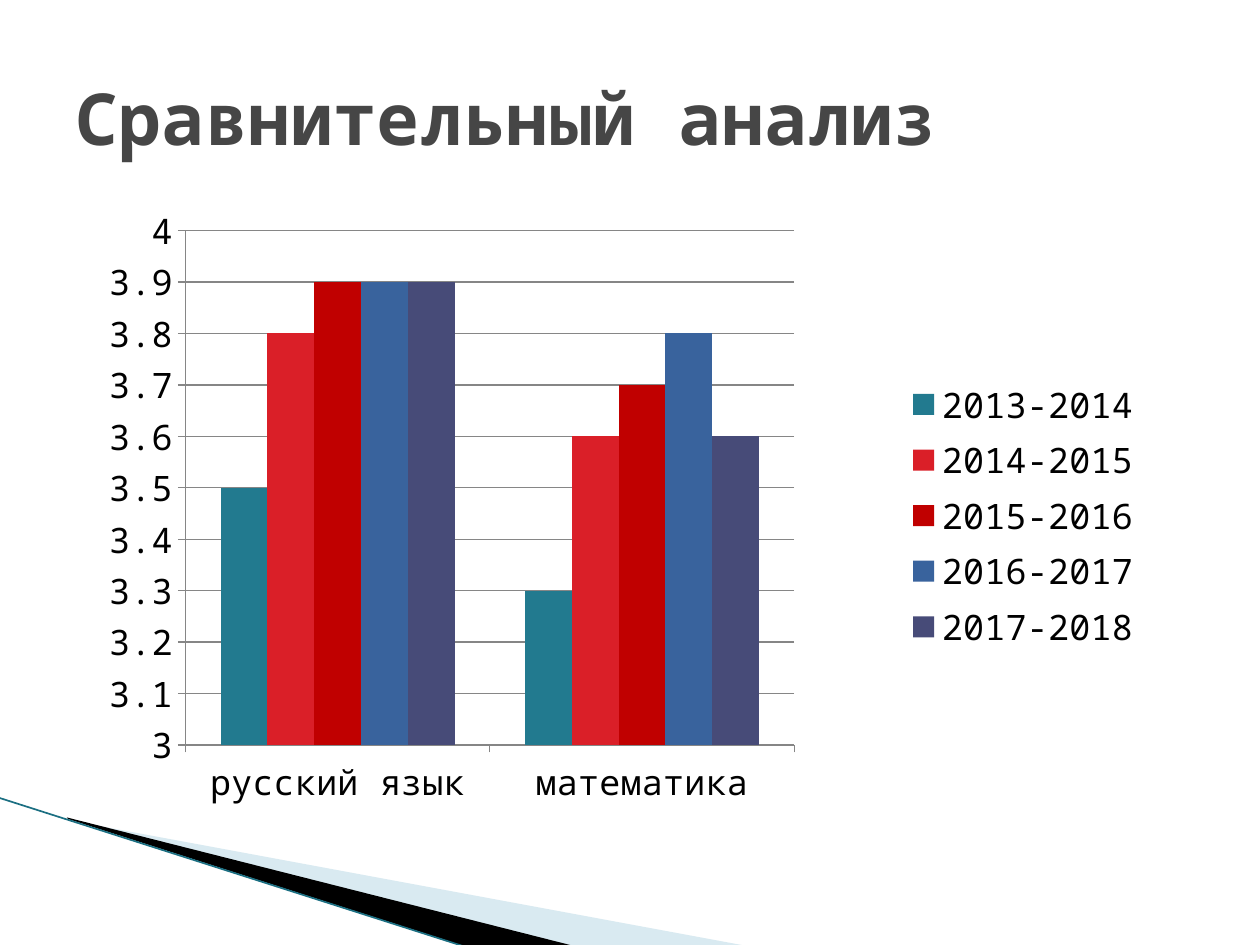
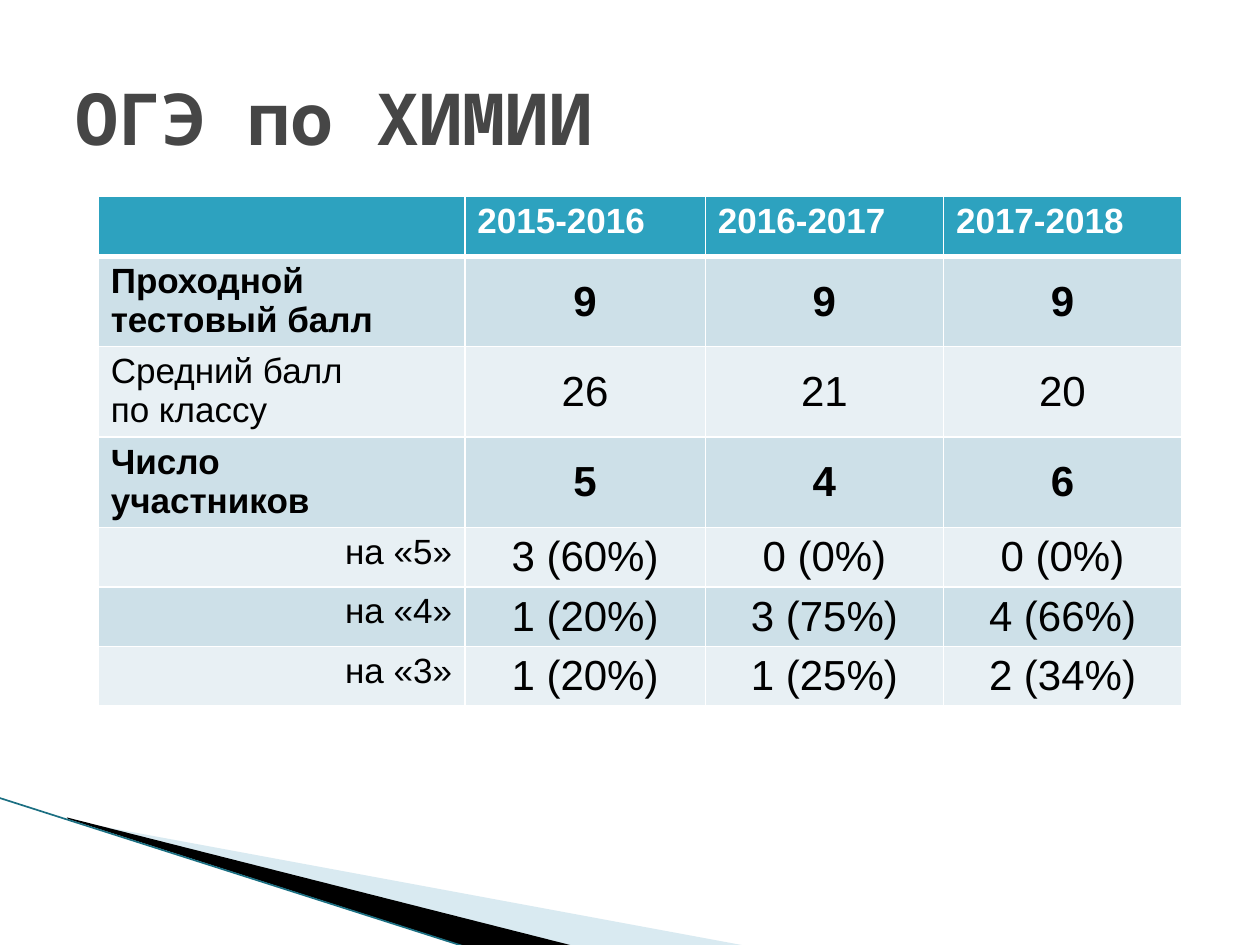
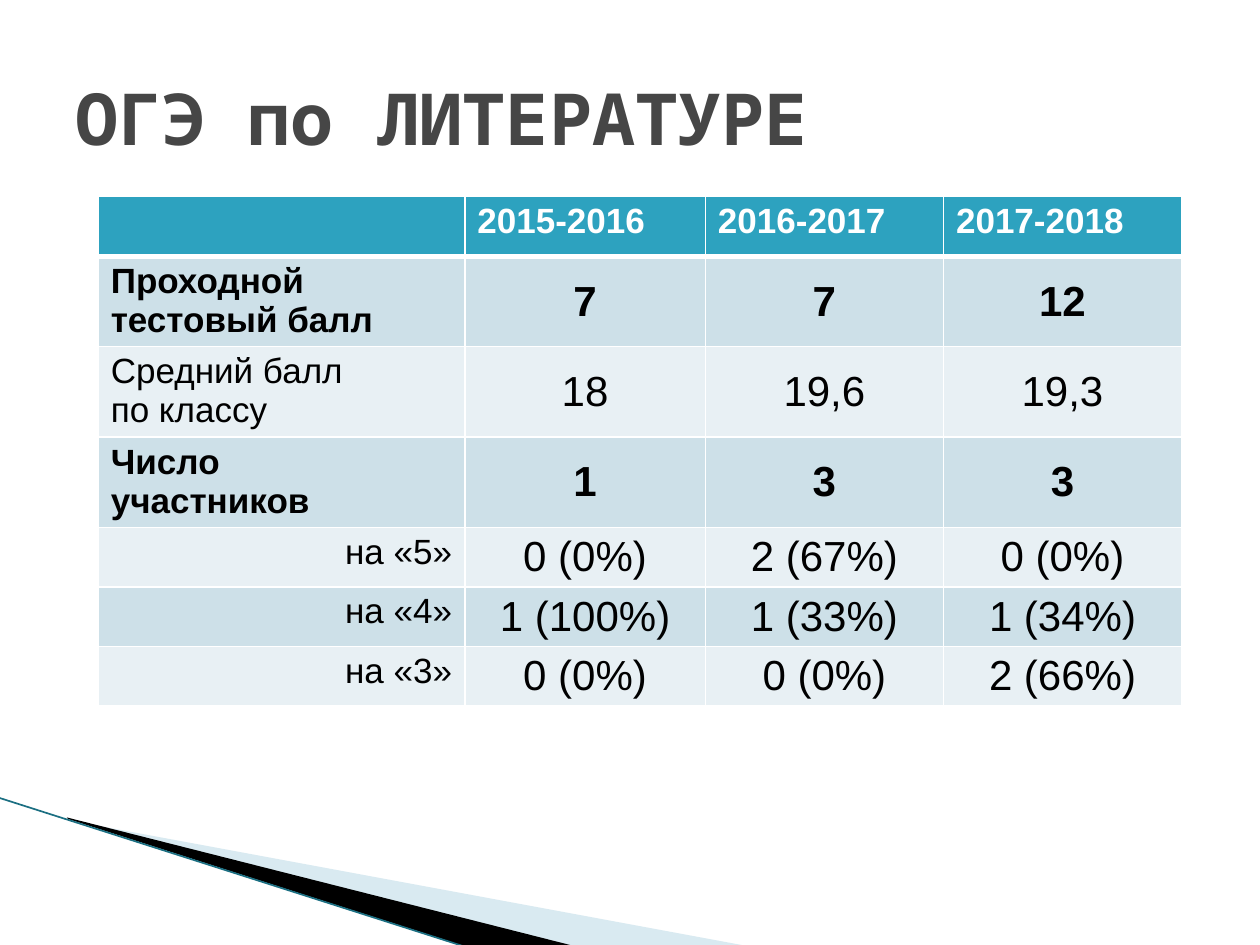
from dataclasses import dataclass

from lxml.etree import SubElement
from pptx import Presentation
from pptx.chart.data import CategoryChartData
from pptx.dml.color import RGBColor
from pptx.enum.chart import XL_CHART_TYPE as ChartType, XL_LEGEND_POSITION as LegendPosition
from pptx.enum.chart import XL_TICK_MARK as TickMark
from pptx.enum.shapes import MSO_CONNECTOR as Connector
from pptx.enum.text import MSO_ANCHOR as Anchor, PP_ALIGN as Align
from pptx.oxml import parse_xml
from pptx.oxml.ns import nsdecls, qn
from pptx.util import Cm, Pt


@dataclass(frozen=True)
class Theme:
    title_font: str = "Noto Sans Mono"
    table_font: str = "Arial"
    title_size: int = 41
    label_size: int = 20
    value_size: int = 24
    title: str = "464646"
    text: str = "000000"
    white: str = "FFFFFF"
    grid: str = "868686"
    wedge_light: str = "A0CBDC"
    wedge_dark: str = "000000"
    wedge_edge: str = "1B6F82"
    header: str = "2DA2BF"
    bands: tuple = ("CDE0E8", "E8F0F4")
    years: tuple = ("227A8F", "DA1F28", "C00000", "39639D", "474B78")


THEME = Theme()

# Boxes in cm: left, top, width, height
TITLE_BOX = (1.27, 0.76, 22.86, 3.18)
CHART_BOX = (2.13, 4.11, 21.16, 12.57)
WEDGE_ORIGIN = (0, 16.08)
TABLE_ORIGIN = (1.98, 3.96)

# Table grid in cm
COLUMN_WIDTHS = (7.39, 4.85, 4.8, 4.8)
ROW_HEIGHTS = (1.21, 1.82, 1.82, 1.82, 1.2, 1.2, 1.2)

# Comparison of average marks by school year
SUBJECTS = ("русский язык", "математика")
MARKS = {
    "2013-2014": (3.5, 3.3),
    "2014-2015": (3.8, 3.6),
    "2015-2016": (3.9, 3.7),
    "2016-2017": (3.9, 3.8),
    "2017-2018": (3.9, 3.6),
}

# Exam results: row labels are shared, values belong to a subject
EXAM_YEARS = ("2015-2016", "2016-2017", "2017-2018")
# lines, alignment, bold
EXAM_ROWS = (
    (("Проходной", "тестовый балл"), Align.LEFT, True),
    (("Средний балл", "по классу"), Align.LEFT, False),
    (("Число", "участников"), Align.LEFT, True),
    (("на «5»",), Align.RIGHT, False),
    (("на «4»",), Align.RIGHT, False),
    (("на «3»",), Align.RIGHT, False),
)
EXAMS = {
    "ОГЭ по ХИМИИ": (
        ("9", "9", "9"),
        ("26", "21", "20"),
        ("5", "4", "6"),
        ("3 (60%)", "0 (0%)", "0 (0%)"),
        ("1 (20%)", "3 (75%)", "4 (66%)"),
        ("1 (20%)", "1 (25%)", "2 (34%)"),
    ),
    "ОГЭ по ЛИТЕРАТУРЕ": (
        ("7", "7", "12"),
        ("18", "19,6", "19,3"),
        ("1", "3", "3"),
        ("0 (0%)", "2 (67%)", "0 (0%)"),
        ("1 (100%)", "1 (33%)", "1 (34%)"),
        ("0 (0%)", "0 (0%)", "2 (66%)"),
    ),
}


def rgb(value):
    return RGBColor.from_string(value)


def style_font(font, name, size, color, bold=False):
    font.name, font.size, font.bold = name, Pt(size), bold
    font.color.rgb = rgb(color)


# Shared corner decoration, kept on the layout
def add_wedges(slide, layout, origin):
    left, top = origin

    def wedge(points, color, opacity=None):
        corners = [(Cm(left + x), Cm(top + y)) for x, y in points]
        builder = slide.shapes.build_freeform(*corners[0])
        builder.add_line_segments(corners[1:])
        outline = builder.convert_to_shape()
        outline.shadow.inherit = False
        outline.line.fill.background()
        outline.fill.solid()
        outline.fill.fore_color.rgb = rgb(color)
        if opacity:
            tint = outline.element.spPr.find(qn("a:solidFill"))[0]
            SubElement(tint, qn("a:alpha"), val=str(opacity * 1000))
        return outline

    light = wedge([(1.4, 0.46), (15.11, 3), (11.58, 3), (1.4, 0.43)], THEME.wedge_light, 40)
    dark = wedge([(1.35, 0.4), (11.61, 3), (9.45, 3.02), (1.37, 0.43)], THEME.wedge_dark)
    edge = slide.shapes.add_connector(
        Connector.STRAIGHT, Cm(left - 0.03), Cm(top), Cm(left + 9.42), Cm(top + 3.02))
    edge.line.color.rgb = rgb(THEME.wedge_edge)
    edge.line.width = Pt(0.95)
    SubElement(edge.element.spPr, qn("a:effectLst"))

    # Behind the placeholders: right after the two group property elements
    for position, part in enumerate((light, dark, edge), start=2):
        layout.shapes.element.insert(position, part.element)


def add_titled_slide(prs, layout, heading):
    slide = prs.slides.add_slide(layout)
    title = slide.shapes.title
    title.left, title.top, title.width, title.height = map(Cm, TITLE_BOX)
    title.text_frame.vertical_anchor = Anchor.MIDDLE
    paragraph = title.text_frame.paragraphs[0]
    paragraph.alignment = Align.LEFT
    run = paragraph.add_run()
    run.text = heading
    style_font(run.font, THEME.title_font, THEME.title_size, THEME.title, True)
    return slide


def place_plot(chart, x, y, width, height):
    plot_area = chart.element.chart.plotArea
    for old in plot_area.findall(qn("c:layout")):
        plot_area.remove(old)
    plot_area.insert(0, parse_xml(
        f'<c:layout {nsdecls("c")}><c:manualLayout><c:layoutTarget val="inner"/>'
        '<c:xMode val="edge"/><c:yMode val="edge"/>'
        f'<c:x val="{x}"/><c:y val="{y}"/><c:w val="{width}"/><c:h val="{height}"/>'
        '</c:manualLayout></c:layout>'))


def add_marks_chart(slide, box):
    marks = CategoryChartData()
    marks.categories = SUBJECTS
    for year, values in MARKS.items():
        marks.add_series(year, values)
    chart = slide.shapes.add_chart(ChartType.COLUMN_CLUSTERED, *map(Cm, box), marks).chart
    style_font(chart.font, THEME.title_font, THEME.label_size, THEME.text)
    chart.has_title = False
    place_plot(chart, 0.076, 0.043, 0.58, 0.825)

    # Columns
    plot = chart.plots[0]
    plot.vary_by_categories = False
    plot.gap_width, plot.overlap = 150, 0
    for year, color in zip(plot.series, THEME.years):
        year.format.fill.solid()
        year.format.fill.fore_color.rgb = rgb(color)

    # Axes
    scale = chart.value_axis
    scale.minimum_scale, scale.maximum_scale, scale.major_unit = 3, 4, 0.1
    scale.has_major_gridlines = True
    for axis in (scale, chart.category_axis):
        axis.major_tick_mark = TickMark.OUTSIDE
        axis.minor_tick_mark = TickMark.NONE
    for line in (scale.format.line, scale.major_gridlines.format.line,
                 chart.category_axis.format.line):
        line.color.rgb = rgb(THEME.grid)
        line.width = Pt(0.75)

    # Legend
    chart.has_legend = True
    chart.legend.position = LegendPosition.RIGHT
    chart.legend.include_in_layout = False


def set_borders(cell, top=1, bottom=1):
    widths = {"lnL": 1, "lnR": 1, "lnT": top, "lnB": bottom}
    for side, width in widths.items():
        border = SubElement(cell._tc.get_or_add_tcPr(), qn(f"a:{side}"), w=str(Pt(width)))
        fill = SubElement(border, qn("a:solidFill"))
        SubElement(fill, qn("a:srgbClr"), val=THEME.white)


def fill_cell(cell, lines, fill, size, color, bold, align=Align.LEFT, anchor=Anchor.TOP):
    cell.fill.solid()
    cell.fill.fore_color.rgb = rgb(fill)
    cell.margin_top = cell.margin_bottom = Cm(0.11)
    cell.vertical_anchor = anchor
    for number, line in enumerate(lines):
        frame = cell.text_frame
        paragraph = frame.add_paragraph() if number else frame.paragraphs[0]
        paragraph.alignment = align
        run = paragraph.add_run()
        run.text = line
        style_font(run.font, THEME.table_font, size, color, bold)


def add_exam_table(slide, origin, results):
    size = (sum(COLUMN_WIDTHS), sum(ROW_HEIGHTS))
    table = slide.shapes.add_table(
        len(ROW_HEIGHTS), len(COLUMN_WIDTHS), *map(Cm, origin + size)).table
    table.horz_banding = False
    for column, width in zip(table.columns, COLUMN_WIDTHS):
        column.width = Cm(width)
    for row, height in zip(table.rows, ROW_HEIGHTS):
        row.height = Cm(height)

    # Header row
    for column, lines in enumerate([()] + [(year,) for year in EXAM_YEARS]):
        cell = table.cell(0, column)
        set_borders(cell, bottom=3)
        fill_cell(cell, lines, THEME.header, THEME.label_size, THEME.white, True)

    # Label and values of each row
    for row, ((label, align, bold), values) in enumerate(zip(EXAM_ROWS, results), start=1):
        band = THEME.bands[(row - 1) % 2]
        for column in range(len(COLUMN_WIDTHS)):
            set_borders(table.cell(row, column), top=3 if row == 1 else 1)
        fill_cell(table.cell(row, 0), label, band, THEME.label_size, THEME.text, bold, align)
        for column, value in enumerate(values, start=1):
            fill_cell(table.cell(row, column), (value,), band, THEME.value_size,
                      THEME.text, bold, Align.CENTER, Anchor.MIDDLE)


def main():
    prs = Presentation()
    prs.slide_width, prs.slide_height = Cm(25.4), Cm(19.05)
    layout = prs.slide_layouts.get_by_name("Title Only")

    comparison = add_titled_slide(prs, layout, "Сравнительный анализ")
    add_wedges(comparison, layout, WEDGE_ORIGIN)
    add_marks_chart(comparison, CHART_BOX)

    for heading, results in EXAMS.items():
        add_exam_table(add_titled_slide(prs, layout, heading), TABLE_ORIGIN, results)

    prs.save("out.pptx")


if __name__ == "__main__":
    main()
